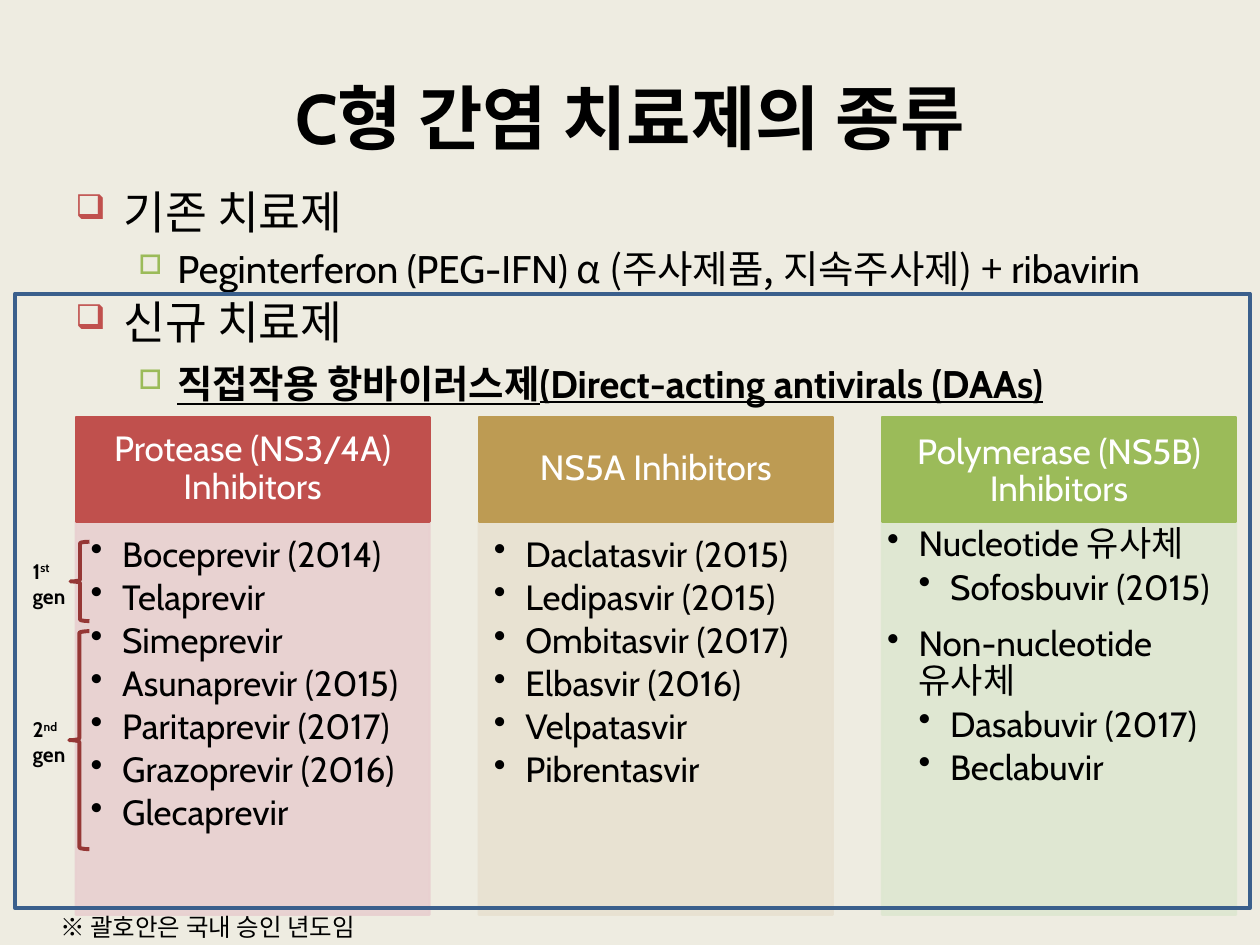
from dataclasses import dataclass

from lxml.etree import SubElement
from pptx import Presentation
from pptx.dml.color import RGBColor
from pptx.enum.shapes import MSO_SHAPE
from pptx.enum.text import MSO_ANCHOR, PP_ALIGN
from pptx.oxml.ns import qn
from pptx.util import Inches, Pt


@dataclass(frozen=True)
class Theme:
    font: str = "Cabin"
    asian: str = "Noto Sans CJK KR"
    back: str = "EEECE1"
    ink: str = "000000"
    light: str = "FFFFFF"
    red: str = "C0504D"
    gold: str = "BD9B53"
    green: str = "9BBB59"
    pink: str = "E8D0D0"
    sand: str = "E8E1D1"
    mint: str = "DEE7D1"
    brace: str = "953735"
    frame: str = "3A5F8C"
    title: int = 40
    head: int = 26
    sub: int = 22
    cell: int = 20
    note: int = 14
    tag: int = 12


class Deck:
    def __init__(self, theme):
        self.theme = theme
        self.file = Presentation()
        self.file.slide_width = Inches(10)
        self.file.slide_height = Inches(7.5)
        self.slide = self.file.slides.add_slide(self.file.slide_layouts[6])
        fill = self.slide.background.fill
        fill.solid()
        fill.fore_color.rgb = RGBColor.from_string(theme.back)

    def text(self, box):
        shape = self.slide.shapes.add_textbox(*map(Inches, box))
        return self.setup(shape.text_frame)

    def setup(self, frame, pads=(0.1, 0.05, 0.1, 0.05), anchor=MSO_ANCHOR.TOP):
        frame.word_wrap = True
        frame.vertical_anchor = anchor
        (frame.margin_left, frame.margin_top,
         frame.margin_right, frame.margin_bottom) = map(Inches, pads)
        return frame

    def shape(self, kind, box, line, width, fill=None, alpha=None):
        shape = self.slide.shapes.add_shape(kind, *map(Inches, box))
        shape.shadow.inherit = False
        shape.line.width = Pt(width)
        shape.line.color.rgb = RGBColor.from_string(line)
        if fill:
            shape.fill.solid()
            shape.fill.fore_color.rgb = RGBColor.from_string(fill)
        else:
            shape.fill.background()
        if alpha:
            for color in shape._element.spPr.iter(qn("a:srgbClr")):
                SubElement(color, qn("a:alpha"), val=str(alpha * 1000))
        return shape

    def para(self, frame, align=PP_ALIGN.LEFT, level=0, space=None,
             before=0, after=0):
        para = frame.paragraphs[0]
        if para.runs:
            para = frame.add_paragraph()
        para.alignment = align
        para.level = level
        para.line_spacing = space
        para.space_before = Pt(before)
        para.space_after = Pt(after)
        return para

    def run(self, para, text, size, color=None, font=None, bold=False,
            under=False, raised=False):
        run = para.add_run()
        run.text = text
        style = run.font
        style.size = Pt(size)
        style.bold = bold
        style.underline = under
        style.color.rgb = RGBColor.from_string(color or self.theme.ink)
        style.name = font or self.theme.font
        props = run._r.get_or_add_rPr()
        SubElement(props, qn("a:ea"), typeface=self.theme.asian)
        if raised:
            props.set("baseline", "30000")

    def bullet(self, para, mark, left, hang, color=None, scale=100):
        props = para._p.get_or_add_pPr()
        props.set("marL", str(Inches(left)))
        props.set("indent", str(-Inches(hang)))
        if color:
            node = SubElement(props, qn("a:buClr"))
            SubElement(node, qn("a:srgbClr"), val=color)
        SubElement(props, qn("a:buSzPct"), val=str(scale * 1000))
        SubElement(props, qn("a:buChar"), char=mark)

    def topic(self, frame, space):
        para = self.para(frame, space=Pt(space), before=5)
        self.bullet(para, "❑", 0.38, 0.38, self.theme.red, 75)
        return para

    def point(self, frame, space):
        para = self.para(frame, level=1, space=Pt(space), before=4.4)
        self.bullet(para, "□", 0.81, 0.31, self.theme.green, 70)
        return para

    def column(self, left, heads, dark, pale, items, pads):
        size = self.theme.cell
        body = self.shape(MSO_SHAPE.RECTANGLE, (left, 4.14, 2.81, 3.12),
                          pale, 1.25, pale, 90)
        top = self.shape(MSO_SHAPE.RECTANGLE, (left, 3.31, 2.81, 0.83),
                         dark, 1.25, dark)
        frame = self.setup(top.text_frame, (0.16, 0.09, 0.16, 0.09),
                           MSO_ANCHOR.MIDDLE)
        for i, head in enumerate(heads):
            last = i == len(heads) - 1
            para = self.para(frame, PP_ALIGN.CENTER,
                             space=0.9 if last else 1, after=7 if last else 0)
            self.run(para, head, size, self.theme.light)
        frame = self.setup(body.text_frame, pads)
        for level, name, after in items:
            para = self.para(frame, level=level, space=0.9, after=after)
            self.bullet(para, "•", 0.25 * level, 0.25)
            self.run(para, name, size)

    def brace(self, box):
        self.shape(MSO_SHAPE.LEFT_BRACE, box, self.theme.brace, 2.25)

    def tag(self, top, digit, suffix):
        para = self.para(self.text((0.16, top, 0.59, 0.5)))
        size = self.theme.tag
        self.run(para, digit, size, bold=True)
        self.run(para, suffix, size, bold=True, raised=True)
        self.run(para, " gen", size, bold=True)

    def save(self):
        self.file.save("out.pptx")


def main():
    look = Theme()
    deck = Deck(look)

    title = deck.text((0.5, 0.3, 9, 1.25))
    title.vertical_anchor = MSO_ANCHOR.MIDDLE
    deck.run(deck.para(title, PP_ALIGN.CENTER), "C형 간염 치료제의 종류",
             look.title, bold=True)

    body = deck.text((0.5, 1.48, 9, 1.8))
    deck.run(deck.topic(body, 26), "기존 치료제", look.head)
    para = deck.point(body, 26)
    deck.run(para, "Peginterferon (PEG-IFN) ", look.sub)
    deck.run(para, "α (주사제품, 지속주사제) + ", look.sub, font=look.asian)
    deck.run(para, "ribavirin", look.sub)
    deck.run(deck.topic(body, 28), "신규 치료제", look.head)
    deck.run(deck.point(body, 28),
             "직접작용 항바이러스제(Direct-acting antivirals (DAAs)",
             look.sub, bold=True, under=True)

    first = ["Boceprevir (2014)", "Telaprevir", "Simeprevir",
             "Asunaprevir (2015)", "Paritaprevir (2017)",
             "Grazoprevir (2016)", "Glecaprevir"]
    second = ["Daclatasvir (2015)", "Ledipasvir (2015)", "Ombitasvir (2017)",
              "Elbasvir (2016)", "Velpatasvir", "Pibrentasvir"]
    third = [(1, "Nucleotide 유사체", 3), (2, "Sofosbuvir (2015)", 10.5),
             (1, "Non-nucleotide 유사체", 3), (2, "Dasabuvir (2017)", 3),
             (2, "Beclabuvir", 3)]
    wide, slim = (0.12, 0.12, 0.16, 0.17), (0.04, 0.04, 0.05, 0.05)
    columns = [
        (["Protease (NS3/4A) Inhibitors"], look.red, look.pink,
         [(1, name, 3) for name in first], wide),
        (["NS5A Inhibitors"], look.gold, look.sand,
         [(1, name, 3) for name in second], wide),
        (["Polymerase (NS5B)", "Inhibitors"], look.green, look.mint,
         third, slim),
    ]
    for i, column in enumerate(columns):
        deck.column(0.6 + 3.2 * i, *column)

    deck.brace((0.56, 4.3, 0.15, 0.63))
    deck.brace((0.55, 5.01, 0.16, 1.73))
    deck.tag(4.38, "1", "st")
    deck.tag(5.64, "2", "nd")
    deck.shape(MSO_SHAPE.RECTANGLE, (0.12, 2.33, 9.8, 4.88), look.frame, 2.25)
    note = deck.para(deck.text((0.38, 7.19, 9.27, 0.34)))
    deck.run(note, "※ 괄호안은 국내 승인 년도임", look.note)
    deck.save()


if __name__ == "__main__":
    main()
